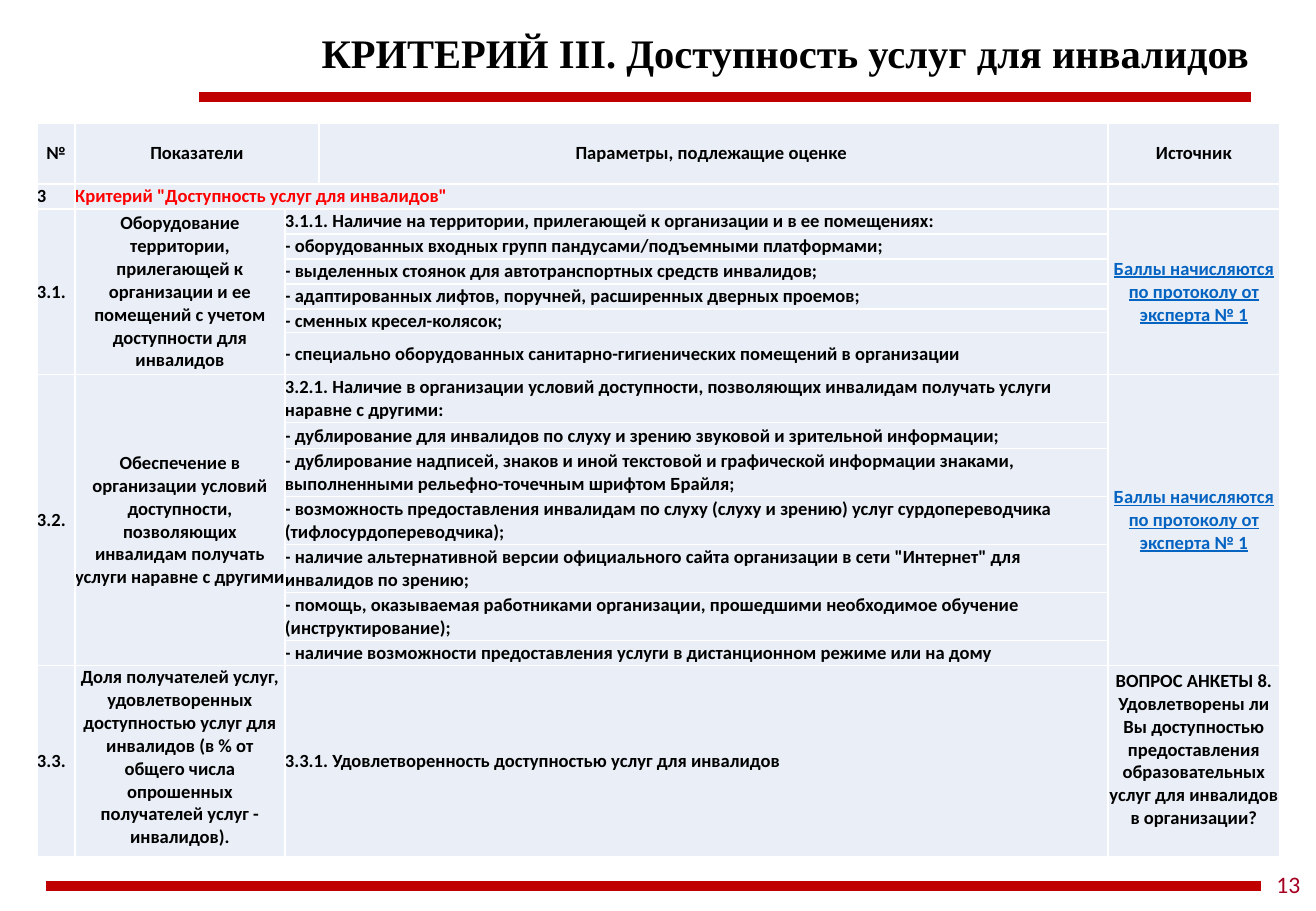
"""Builds the slide about how accessible services are for disabled people."""
import dataclasses
import itertools
import typing

import lxml.etree
import pptx
import pptx.dml.color
import pptx.enum.shapes
import pptx.enum.text
import pptx.oxml.ns
import pptx.slide
import pptx.table
import pptx.text.text
import pptx.util

EMU_PER_PX = 914400 / 121.5
ALIGN = pptx.enum.text.PP_ALIGN
ANCHOR = pptx.enum.text.MSO_ANCHOR


@dataclasses.dataclass(frozen=True)
class Theme:
    body_font: str = "Calibri"
    title_font: str = "Times New Roman"
    title_size: int = 24
    cell_size: int = 11
    number_size: int = 14
    rule_width: int = 6
    border_width: int = 1
    text: str = "000000"
    accent: str = "FF0000"
    link: str = "0563C1"
    rule: str = "C00000"
    page_number: str = "A50021"
    cell: str = "EAEFF7"
    border: str = "FFFFFF"


THEME = Theme()


@dataclasses.dataclass(frozen=True)
class Rule:
    left: int
    right: int
    y: int


@dataclasses.dataclass(frozen=True)
class Entry:
    row: int
    column: int
    text: str
    rows: int = 1
    columns: int = 1
    centered: bool = False
    color: str = THEME.text
    underline: bool = False
    bottom: int = 0


@dataclasses.dataclass(frozen=True)
class Group:
    number: str
    indicator: str
    parameters: tuple[str, ...]
    source: str
    linked: bool = True
    indicator_bottom: int = 0
    source_bottom: int = 0


PROTOCOL = "Баллы начисляются по протоколу от эксперта № 1"
RULES = (Rule(199, 1251, 97), Rule(46, 1261, 886))
COLUMN_WIDTHS = (38, 210, 34, 789, 172)
ROW_HEIGHTS = (61, 25, 25, 25, 25, 25, 24, 42, 48, 26, 48, 48, 48, 48, 25, 191)
HEADING = (
    Entry(0, 0, "№", centered=True),
    Entry(0, 1, "Показатели", columns=2, centered=True),
    Entry(0, 3, "Параметры, подлежащие оценке ", centered=True),
    Entry(0, 4, "Источник", centered=True),
    Entry(1, 0, "3"),
    Entry(1, 1, 'Критерий "Доступность услуг для инвалидов"', columns=3, color=THEME.accent),
)
GROUPS = (
    Group(
        "3.1.",
        "Оборудование территории, прилегающей к организации и ее помещений с учетом доступности для инвалидов",
        (
            "3.1.1. Наличие на территории, прилегающей к организации и в ее помещениях:",
            "- оборудованных входных групп пандусами/подъемными платформами;",
            "- выделенных стоянок для автотранспортных средств инвалидов;",
            "- адаптированных лифтов, поручней, расширенных дверных проемов;",
            "- сменных кресел-колясок;",
            "- специально оборудованных санитарно-гигиенических помещений в организации",
        ),
        PROTOCOL,
    ),
    Group(
        "3.2.",
        "Обеспечение в организации условий доступности, позволяющих инвалидам получать услуги наравне с другими",
        (
            "3.2.1. Наличие в организации условий доступности, позволяющих инвалидам получать услуги наравне с другими:",
            "- дублирование для инвалидов по слуху и зрению звуковой и зрительной информации;",
            "- дублирование надписей, знаков и иной текстовой и графической информации знаками, "
            "выполненными рельефно-точечным шрифтом Брайля;",
            "- возможность предоставления инвалидам по слуху (слуху и зрению) услуг сурдопереводчика "
            "(тифлосурдопереводчика);",
            '- наличие альтернативной версии официального сайта организации в сети "Интернет" для инвалидов по зрению;',
            "- помощь, оказываемая работниками организации, прошедшими необходимое обучение (инструктирование);",
            "- наличие возможности предоставления услуги в дистанционном режиме или на дому",
        ),
        PROTOCOL,
    ),
    Group(
        "3.3.",
        "Доля получателей услуг, удовлетворенных доступностью услуг для инвалидов "
        "(в % от общего числа опрошенных получателей услуг - инвалидов).",
        ("3.3.1. Удовлетворенность доступностью услуг для инвалидов",),
        "ВОПРОС АНКЕТЫ 8. Удовлетворены ли Вы доступностью предоставления образовательных "
        "услуг для инвалидов в организации?",
        linked=False,
        indicator_bottom=8,
        source_bottom=23,
    ),
)


def emu(px: int) -> pptx.util.Emu:
    return pptx.util.Emu(round(px * EMU_PER_PX))


def rgb(color: str) -> pptx.dml.color.RGBColor:
    return pptx.dml.color.RGBColor.from_string(color)


def write(frame: pptx.text.text.TextFrame, text: str, *, size: int = THEME.cell_size,
          font: str = THEME.body_font, color: str = THEME.text, bold: bool = True,
          underline: bool = False, align: ALIGN = ALIGN.LEFT) -> None:
    frame.word_wrap = True
    para = frame.paragraphs[0]
    para.alignment = align
    span = para.add_run()
    span.text = text
    span.font.name = font
    span.font.size = pptx.util.Pt(size)
    span.font.bold = bold
    span.font.underline = underline
    span.font.color.rgb = rgb(color)


def add_text(page: pptx.slide.Slide, left: int, top: int, width: int, height: int,
             text: str, anchor: ANCHOR, **text_format: typing.Any) -> None:
    box = page.shapes.add_textbox(emu(left), emu(top), emu(width), emu(height))
    box.text_frame.vertical_anchor = anchor
    write(box.text_frame, text, **text_format)


def add_rule(page: pptx.slide.Slide, rule: Rule) -> None:
    line = page.shapes.add_connector(
        pptx.enum.shapes.MSO_CONNECTOR.STRAIGHT,
        emu(rule.left), emu(rule.y), emu(rule.right), emu(rule.y))
    line.line.color.rgb = rgb(THEME.rule)
    line.line.width = pptx.util.Pt(THEME.rule_width)
    lxml.etree.SubElement(line._element.spPr, pptx.oxml.ns.qn("a:effectLst"))


def style_cell(cell: pptx.table._Cell) -> None:
    cell.margin_left = cell.margin_right = cell.margin_top = cell.margin_bottom = 0
    cell.vertical_anchor = ANCHOR.MIDDLE
    qn = pptx.oxml.ns.qn
    properties = cell._tc.get_or_add_tcPr()
    for side in "LRTB":
        border = lxml.etree.SubElement(
            properties, qn(f"a:ln{side}"), w=str(pptx.util.Pt(THEME.border_width)))
        fill = lxml.etree.SubElement(border, qn("a:solidFill"))
        lxml.etree.SubElement(fill, qn("a:srgbClr"), val=THEME.border)
    cell.fill.solid()
    cell.fill.fore_color.rgb = rgb(THEME.cell)
    lxml.etree.SubElement(
        cell.text_frame.paragraphs[0]._p, qn("a:endParaRPr"), sz=str(THEME.cell_size * 100))


def group_entries() -> typing.Iterator[Entry]:
    row = 2
    for group in GROUPS:
        rows = len(group.parameters)
        yield Entry(row, 0, group.number, rows)
        yield Entry(row, 1, group.indicator, rows, centered=True, bottom=group.indicator_bottom)
        yield Entry(row, 4, group.source, rows, centered=True, underline=group.linked,
                    color=THEME.link if group.linked else THEME.text, bottom=group.source_bottom)
        for offset, parameter in enumerate(group.parameters):
            yield Entry(row + offset, 2, parameter, columns=2)
        row += rows


def fill_entry(table: pptx.table.Table, entry: Entry) -> None:
    cell = table.cell(entry.row, entry.column)
    if entry.rows * entry.columns > 1:
        cell.merge(table.cell(entry.row + entry.rows - 1, entry.column + entry.columns - 1))
    cell.margin_bottom = emu(entry.bottom)
    write(cell.text_frame, entry.text, color=entry.color, underline=entry.underline,
          align=ALIGN.CENTER if entry.centered else ALIGN.LEFT)


def add_criteria(page: pptx.slide.Slide) -> None:
    table = page.shapes.add_table(
        len(ROW_HEIGHTS), len(COLUMN_WIDTHS), emu(37), emu(123),
        emu(sum(COLUMN_WIDTHS)), emu(sum(ROW_HEIGHTS))).table
    table.first_row = table.horz_banding = False
    for column, width in zip(table.columns, COLUMN_WIDTHS):
        column.width = emu(width)
    for row, height in zip(table.rows, ROW_HEIGHTS):
        row.height = emu(height)
    for cell in table.iter_cells():
        style_cell(cell)
    for entry in itertools.chain(HEADING, group_entries()):
        fill_entry(table, entry)


def main() -> None:
    deck = pptx.Presentation()
    deck.slide_width, deck.slide_height = emu(1316), emu(911)
    page = deck.slides.add_slide(deck.slide_layouts[6])
    for rule in RULES:
        add_rule(page, rule)
    add_text(page, 276, 22, 985, 61, "КРИТЕРИЙ III. Доступность услуг для инвалидов", ANCHOR.TOP,
             size=THEME.title_size, font=THEME.title_font, align=ALIGN.RIGHT)
    add_text(page, 1261, 858, 55, 53, "13", ANCHOR.MIDDLE, size=THEME.number_size,
             color=THEME.page_number, bold=False, align=ALIGN.CENTER)
    add_criteria(page)
    deck.save("out.pptx")


if __name__ == "__main__":
    main()
